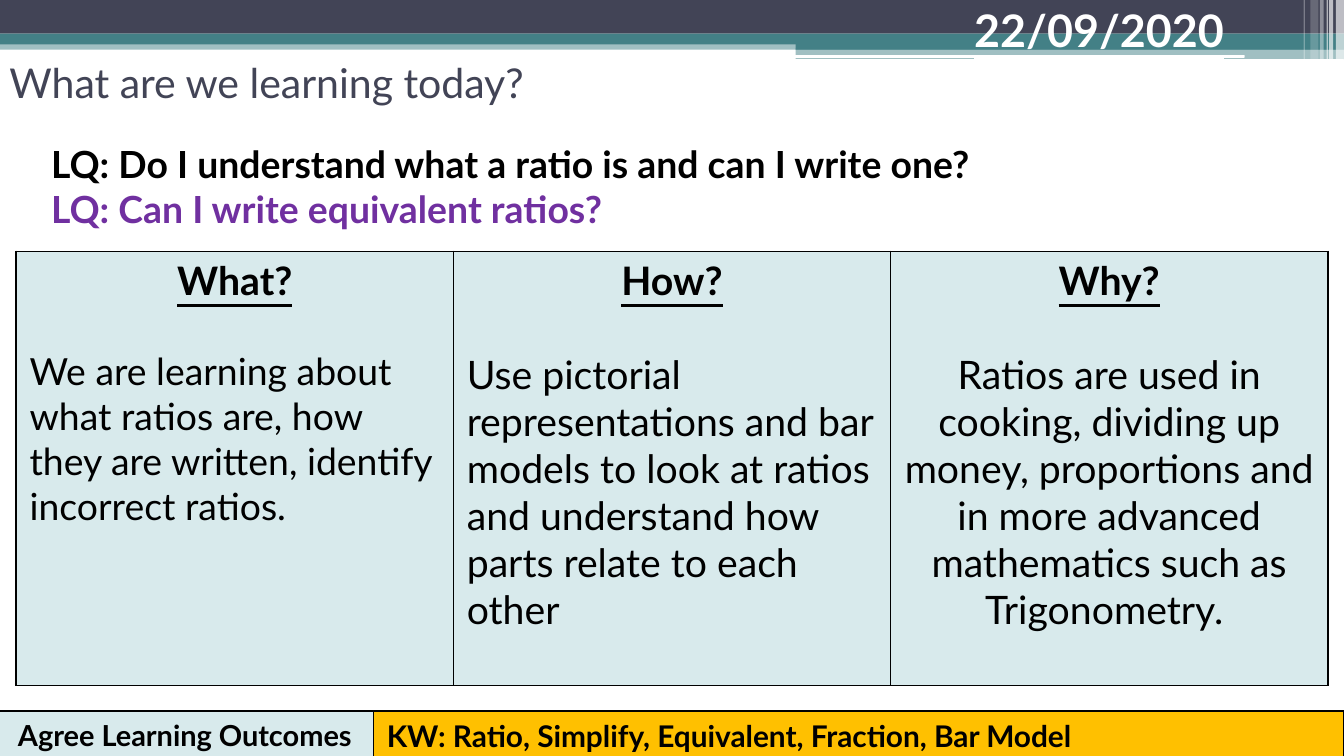
from dataclasses import dataclass

from lxml.etree import SubElement
from pptx import Presentation
from pptx.dml.color import RGBColor
from pptx.enum.shapes import MSO_SHAPE as Preset
from pptx.enum.text import MSO_ANCHOR as Anchor, MSO_AUTO_SIZE as AutoSize, PP_ALIGN as Align
from pptx.oxml.ns import qn
from pptx.util import Inches, Pt

COLUMNS, ROWS = 100, 56.25


@dataclass(frozen=True)
class Theme:
    font: str = "Lato"
    ink: str = "000000"
    white: str = "FFFFFF"
    slate: str = "424456"
    teal: str = "438086"
    pale: str = "D8EAEC"
    purple: str = "7030A0"
    amber: str = "FFC000"
    date_size: float = 24
    title_size: float = 22
    heading_size: float = 21
    question_size: float = 20
    keyword_size: float = 16
    outcome_size: float = 15.5


def write(paragraph, text, size, color, font, bold=False, underline=False,
          align=Align.LEFT, before=0):
    paragraph.alignment = align
    paragraph.space_before = Pt(before)
    run = paragraph.add_run()
    run.text = text
    run.font.name = font
    run.font.size = Pt(size)
    run.font.bold = bold
    run.font.underline = underline
    run.font.color.rgb = RGBColor.from_string(color)


class LessonSlide:
    def __init__(self, presentation, theme):
        self.theme = theme
        self.column = presentation.slide_width / COLUMNS
        self.row = presentation.slide_height / ROWS
        self.slide = presentation.slides.add_slide(presentation.slide_layouts[1])

    def area(self, left, top, width, height):
        return (round(left * self.column), round(top * self.row),
                round(width * self.column), round(height * self.row))

    def text(self, paragraph, text, size, color, **style):
        write(paragraph, text, size, color, self.theme.font, **style)

    def box(self, area, fill, opacity=100, line=None, line_width=0.75, preset=Preset.RECTANGLE):
        shape = self.slide.shapes.add_shape(preset, *self.area(*area))
        shape.shadow.inherit = False
        shape.fill.solid()
        shape.fill.fore_color.rgb = RGBColor.from_string(fill)
        if opacity < 100:
            color = shape.fill._xPr.find(qn("a:solidFill"))[0]
            SubElement(color, qn("a:alpha"), val=str(opacity * 1000))
        if line:
            shape.line.color.rgb = RGBColor.from_string(line)
            shape.line.width = Pt(line_width)
        else:
            shape.line.fill.background()
        return shape

    def label(self, area, fill, text, size, align):
        frame = self.box(area, fill, line=self.theme.ink).text_frame
        frame.word_wrap = True
        frame.vertical_anchor = Anchor.TOP
        self.text(frame.paragraphs[0], text, size, self.theme.ink, bold=True, align=align)

    def date(self, area, text):
        frame = self.slide.shapes.add_textbox(*self.area(*area)).text_frame
        frame.word_wrap = True
        self.text(frame.paragraphs[0], text, self.theme.date_size, self.theme.white,
                  bold=True, underline=True)

    def placeholder(self, shape, area, anchor):
        shape.left, shape.top, shape.width, shape.height = self.area(*area)
        frame = shape.text_frame
        frame.word_wrap = True
        frame.auto_size = AutoSize.NONE
        frame.vertical_anchor = anchor
        return frame

    def title(self, area, text):
        frame = self.placeholder(self.slide.shapes.title, area, Anchor.MIDDLE)
        self.text(frame.paragraphs[0], text, self.theme.title_size, self.theme.slate)

    def questions(self, area, questions):
        frame = self.placeholder(self.slide.placeholders[1], area, Anchor.TOP)
        for index, (text, color) in enumerate(questions):
            paragraph = frame.add_paragraph() if index else frame.paragraphs[0]
            self.text(paragraph, text, self.theme.question_size, color, bold=True)
            properties = paragraph._p.get_or_add_pPr()
            properties.set("marL", "0")
            properties.set("indent", "0")
            SubElement(properties, qn("a:buNone"))

    def border(self, cell):
        properties = cell._tc.get_or_add_tcPr()
        for side in ("lnL", "lnR", "lnT", "lnB"):
            line = SubElement(properties, qn(f"a:{side}"), w=str(Pt(1)))
            SubElement(SubElement(line, qn("a:solidFill")), qn("a:srgbClr"), val=self.theme.ink)

    def outcomes(self, area, outcomes):
        frame = self.slide.shapes.add_table(1, len(outcomes), *self.area(*area))
        table = frame.table
        table.first_row = table.horz_banding = False
        for cell, (heading, body, size, align) in zip(table.rows[0].cells, outcomes):
            self.border(cell)
            cell.fill.solid()
            cell.fill.fore_color.rgb = RGBColor.from_string(self.theme.pale)
            cell.margin_left = cell.margin_right = Inches(0.1)
            cell.margin_top = cell.margin_bottom = Inches(0.04)
            self.text(cell.text_frame.paragraphs[0], heading, self.theme.heading_size,
                      self.theme.ink, bold=True, underline=True, align=Align.CENTER)
            self.text(cell.text_frame.add_paragraph(), body, size, self.theme.ink,
                      align=align, before=size * 1.2)


def main():
    presentation = Presentation()
    presentation.slide_width = Inches(10)
    presentation.slide_height = Inches(10) * 9 // 16
    theme = Theme()
    lesson = LessonSlide(presentation, theme)

    bands = [
        ((0, 3, 100, 0.7), theme.teal, 50),
        ((0, 0, 100, 2.5), theme.slate, 100),
        ((0, 2.5, 100, 0.8), theme.teal, 100),
        ((59.2, 3, 40.8, 0.7), theme.teal, 100),
        ((59.2, 3.6, 40.8, 1.5), theme.teal, 50),
    ]
    for area, color, opacity in bands:
        lesson.box(area, color, opacity)
    lesson.box((59.1, 4.1, 33.5, 0.2), theme.white, preset=Preset.ROUNDED_RECTANGLE)

    strips = [(99.4, 0.6, 5.1, 65), (98.9, 0.3, 5.1, 65), (98.7, 0.1, 5.1, 60),
              (98.2, 0.3, 5.1, 40), (97.5, 0.6, 4.8, 20), (97, 0.1, 4.8, 30)]
    for left, width, height, opacity in strips:
        lesson.box((left, 0, width, height), theme.white, opacity)

    lesson.date((71.5, -0.3, 29.5, 4), "22/09/2020")
    lesson.label((-0.3, 52.9, 28.1, 3.6), theme.pale, "Agree Learning Outcomes",
                 theme.outcome_size, Align.CENTER)
    lesson.box((58.7, 4.5, 41.3, 3.1), theme.white, line=theme.white, line_width=1.5)
    lesson.outcomes((1.2, 18.7, 97.6, 32.3), [
        ("What?", "We are learning about what ratios are, how they are written, "
                  "identify incorrect ratios.", theme.question_size, Align.LEFT),
        ("How?", "Use pictorial representations and bar models to look at ratios "
                 "and understand how parts relate to each other", theme.heading_size, Align.LEFT),
        ("Why?", "Ratios are used in cooking, dividing up money, proportions and in more "
                 "advanced mathematics such as Trigonometry. ", theme.heading_size, Align.CENTER),
    ])
    lesson.title((-0.3, 1.7, 90, 8.8), "What are we learning today?")
    lesson.questions((2.8, 10, 96.4, 7.7), [
        ("LQ: Do I understand what a ratio is and can I write one?", theme.ink),
        ("LQ: Can I write equivalent ratios?", theme.purple),
    ])
    lesson.label((27.8, 52.9, 72.2, 3.7), theme.amber,
                 "KW: Ratio, Simplify, Equivalent, Fraction, Bar Model",
                 theme.keyword_size, Align.LEFT)
    presentation.save("out.pptx")


if __name__ == "__main__":
    main()
